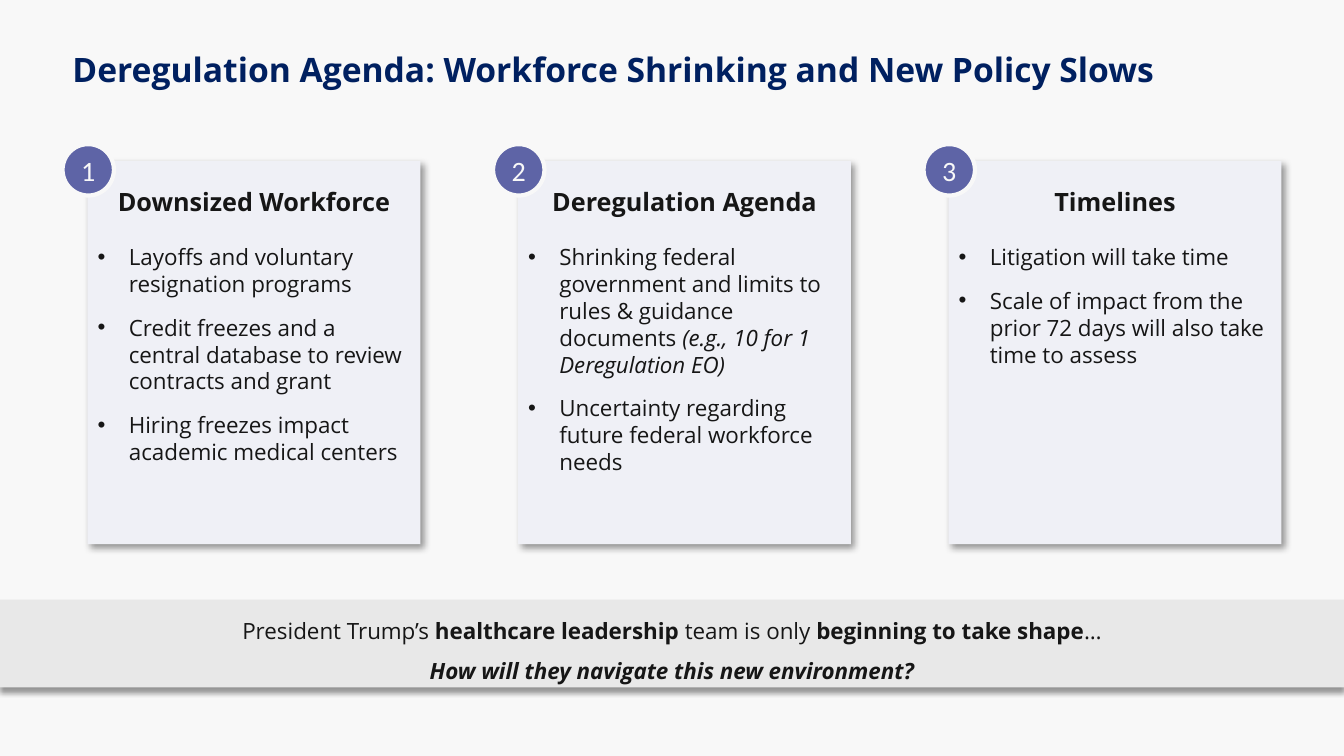
from dataclasses import dataclass

from lxml import etree
from pptx import Presentation
from pptx.dml.color import RGBColor
from pptx.enum.shapes import MSO_SHAPE
from pptx.enum.text import MSO_ANCHOR, PP_ALIGN
from pptx.oxml.ns import qn
from pptx.util import Inches, Pt

RECT, OVAL = MSO_SHAPE.RECTANGLE, MSO_SHAPE.OVAL
TOP, MIDDLE = MSO_ANCHOR.TOP, MSO_ANCHOR.MIDDLE
CENTER, LEFT = PP_ALIGN.CENTER, PP_ALIGN.LEFT


@dataclass(frozen=True)
class Theme:
    background: str = "F8F8F8"
    title: str = "002060"
    text: str = "161616"
    card: str = "EFF0F6"
    badge: str = "5E64A6"
    banner: str = "E8E8E8"
    shadow: str = "000000"
    font: str = "Open Sans"
    badge_font: str = "Calibri"
    title_size: int = 24
    badge_size: int = 20
    heading_size: int = 18
    body_size: int = 16


THEME = Theme()

TITLE = "Deregulation Agenda: Workforce Shrinking and New Policy Slows"

# Each bullet is a list of (text, style) runs; style holds "b" and/or "i".
CARDS = [
    ("Downsized Workforce", [
        [("Layoffs and voluntary resignation programs", "")],
        [("Credit freezes and a central database to review contracts and grant", "")],
        [("Hiring freezes impact academic medical centers", "")],
    ]),
    ("Deregulation Agenda", [
        [("Shrinking federal government and limits to rules & guidance documents ", ""),
         ("(e.g., 10 for 1 Deregulation EO)", "i")],
        [("Uncertainty regarding future federal workforce needs", "")],
    ]),
    ("Timelines", [
        [("Litigation will take time", "")],
        [("Scale of impact from the prior 72 days will also take time to assess", "")],
    ]),
]

BANNER = [
    [("President Trump’s ", ""), ("healthcare leadership ", "b"), ("team is only ", ""),
     ("beginning to take shape", "b"), ("…", "")],
    [("How will they navigate this new environment?", "bi")],
]


def rgb(color):
    return RGBColor.from_string(color)


def add_runs(p, runs, size, color=THEME.text, font=THEME.font):
    for text, style in runs:
        r = p.add_run()
        r.text = text
        r.font.name = font
        r.font.size = Pt(size)
        r.font.color.rgb = rgb(color)
        r.font.bold = "b" in style
        r.font.italic = "i" in style


def add_panel(slide, preset, left, top, width, height, fill, anchor):
    """Add a filled shape without outline or shadow, ready for text."""
    sp = slide.shapes.add_shape(preset, Inches(left), Inches(top),
                                Inches(width), Inches(height))
    sp.shadow.inherit = False
    sp.fill.solid()
    sp.fill.fore_color.rgb = rgb(fill)
    sp.line.fill.background()
    sp.text_frame.word_wrap = True
    sp.text_frame.vertical_anchor = anchor
    return sp


def add_shadow(sp, blur, distance, angle):
    effects = sp._element.spPr.find(qn("a:effectLst"))
    shadow = etree.SubElement(effects, qn("a:outerShdw"), blurRad=str(Pt(blur)),
                              dist=str(Pt(distance)), dir=str(angle * 60000),
                              algn="tl", rotWithShape="0")
    color = etree.SubElement(shadow, qn("a:srgbClr"), val=THEME.shadow)
    etree.SubElement(color, qn("a:alpha"), val="40000")


def make_bullet(p, indent):
    pPr = p._p.get_or_add_pPr()
    pPr.set("marL", str(Inches(indent)))
    pPr.set("indent", str(-Inches(indent)))
    etree.SubElement(pPr, qn("a:buFont"), typeface="Arial")
    etree.SubElement(pPr, qn("a:buChar"), char="•")


def add_title(slide):
    box = slide.shapes.add_textbox(Inches(0.62), Inches(0.44), Inches(12.09), Inches(0.5))
    tf = box.text_frame
    tf.word_wrap = True
    add_runs(tf.paragraphs[0], [(TITLE, "b")], THEME.title_size, THEME.title)


def add_card(slide, left, heading, bullets):
    sp = add_panel(slide, RECT, left, 1.6, 3.3, 3.8, THEME.card, TOP)
    add_shadow(sp, 5, 3, 45)
    tf = sp.text_frame
    tf.margin_top = Inches(0.25)
    p = tf.paragraphs[0]
    p.alignment = CENTER
    p.space_after = Pt(19)
    add_runs(p, [(heading, "b")], THEME.heading_size)
    for runs in bullets:
        p = tf.add_paragraph()
        p.alignment = LEFT
        p.space_after = Pt(12)
        make_bullet(p, 0.31)
        add_runs(p, runs, THEME.body_size)


def add_badge(slide, left, number):
    sp = add_panel(slide, OVAL, left, 1.43, 0.51, 0.51, THEME.badge, MIDDLE)
    sp.line.color.rgb = rgb(THEME.background)
    sp.line.width = Pt(3)
    tf = sp.text_frame
    tf.margin_left = tf.margin_right = tf.margin_top = tf.margin_bottom = 0
    p = tf.paragraphs[0]
    p.alignment = CENTER
    add_runs(p, [(str(number), "")], THEME.badge_size, THEME.background, THEME.badge_font)


def add_banner(slide):
    sp = add_panel(slide, RECT, 0, 5.95, 13.33, 0.87, THEME.banner, MIDDLE)
    add_shadow(sp, 4, 3, 90)
    tf = sp.text_frame
    for i, runs in enumerate(BANNER):
        p = tf.add_paragraph() if i else tf.paragraphs[0]
        p.alignment = CENTER
        p.line_spacing = 1.5
        add_runs(p, runs, THEME.body_size)


def main():
    prs = Presentation()
    prs.slide_width, prs.slide_height = Inches(13.33), Inches(7.5)
    slide = prs.slides.add_slide(prs.slide_layouts[6])
    slide.background.fill.solid()
    slide.background.fill.fore_color.rgb = rgb(THEME.background)

    add_title(slide)
    for i, (heading, bullets) in enumerate(CARDS):
        left = 0.87 + i * 4.27
        add_card(slide, left, heading, bullets)
        add_badge(slide, left - 0.25, i + 1)
    add_banner(slide)
    prs.save("out.pptx")


if __name__ == "__main__":
    main()
